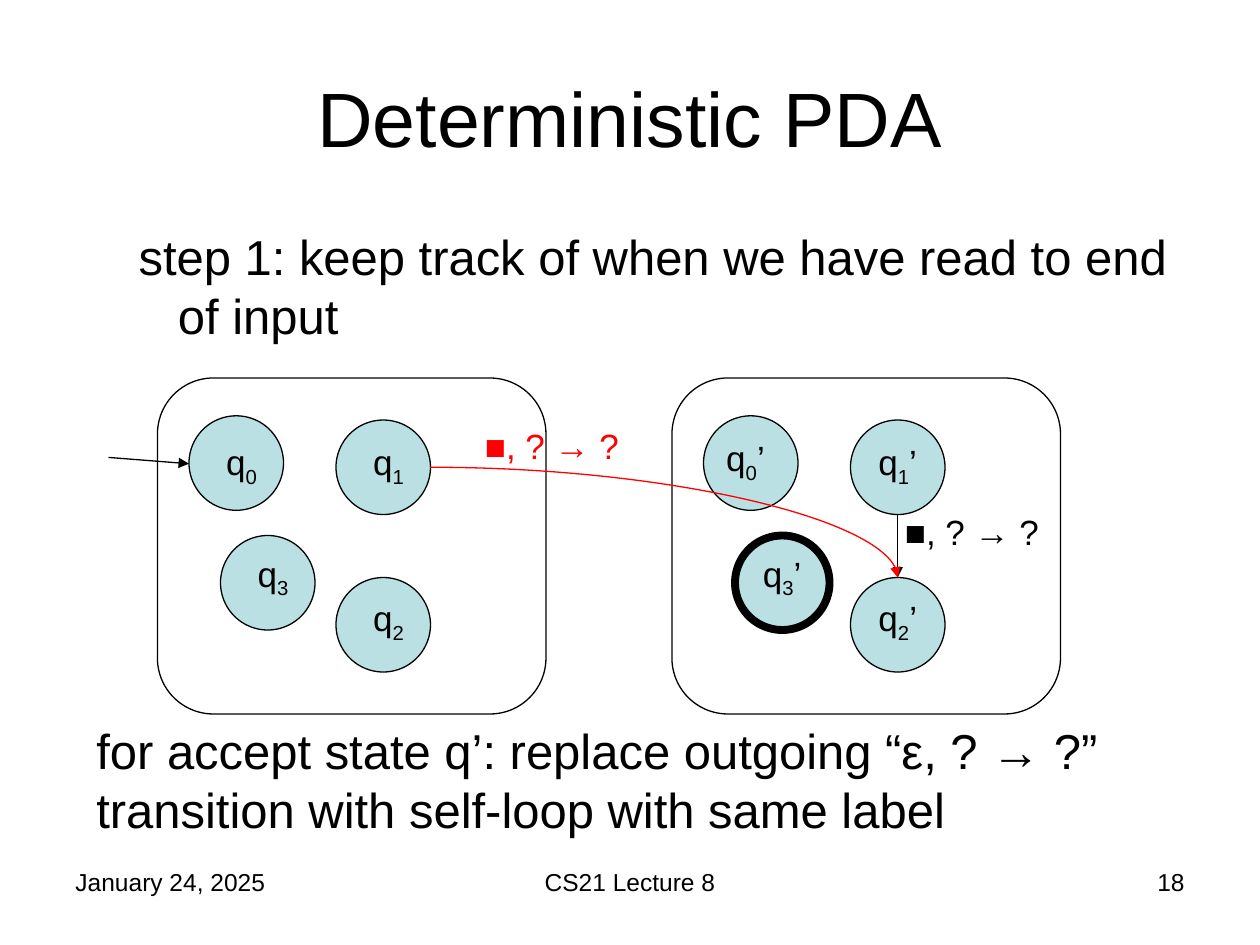
from dataclasses import dataclass

from lxml import etree
from pptx import Presentation
from pptx.dml.color import RGBColor
from pptx.enum.shapes import MSO_CONNECTOR, MSO_SHAPE
from pptx.enum.text import MSO_ANCHOR, MSO_AUTO_SIZE, PP_ALIGN
from pptx.oxml.ns import qn
from pptx.util import Pt


@dataclass(frozen=True)
class Theme:
    font: str = "Arial"
    ink: RGBColor = RGBColor(0, 0, 0)
    accent: RGBColor = RGBColor(255, 0, 0)
    state: RGBColor = RGBColor(0xBB, 0xE0, 0xE3)
    title: int = 44
    body: int = 28
    label: int = 20
    footer: int = 14
    thin: float = 0.75
    thick: float = 4.5


theme = Theme()


def write(box, text, size=theme.label, color=theme.ink, align=PP_ALIGN.LEFT,
          anchor=MSO_ANCHOR.TOP, grow=False, before=None):
    """Write one paragraph; text between underscores is subscript."""
    frame = box.text_frame
    frame.word_wrap = True
    frame.auto_size = MSO_AUTO_SIZE.SHAPE_TO_FIT_TEXT if grow else MSO_AUTO_SIZE.NONE
    frame.vertical_anchor = anchor
    para = frame.paragraphs[0]
    para.alignment = align
    if before:
        para.space_before = Pt(0)
        spacing = para._p.pPr.find(qn("a:spcBef"))
        spacing.remove(spacing[0])
        etree.SubElement(spacing, qn("a:spcPct"), val=str(before * 1000))
    for index, part in enumerate(text.split("_")):
        if not part:
            continue
        span = para.add_run()
        span.text = part
        span.font.name = theme.font
        span.font.size = Pt(size)
        span.font.color.rgb = color
        if index % 2:
            span.font._element.set("baseline", "-25000")
    return para


def connect(kind, start, end, color=theme.ink):
    """Draw a thin connector with an arrowhead at its end."""
    arrow = page.shapes.add_connector(kind, *(Pt(v) for v in start + end))
    arrow.line.color.rgb = color
    arrow.line.width = Pt(theme.thin)
    etree.SubElement(arrow.line._get_or_add_ln(), qn("a:tailEnd"), type="triangle")
    etree.SubElement(arrow._element.spPr, qn("a:effectLst"))
    return arrow


deck = Presentation()
deck.slide_width, deck.slide_height = Pt(720), Pt(540)
page = deck.slides.add_slide(deck.slide_layouts[1])

# Title and first step
title, body = page.placeholders
title.left, title.top, title.width, title.height = Pt(36), Pt(21.6), Pt(648), Pt(90)
write(title, "Deterministic PDA", size=theme.title, align=PP_ALIGN.CENTER,
      anchor=MSO_ANCHOR.MIDDLE)
body.left, body.top, body.width, body.height = Pt(36), Pt(126), Pt(648), Pt(84)
para = write(body, "step 1: keep track of when we have read to end of input",
             size=theme.body, before=20)
para.level = 1
para._p.pPr.set("marL", str(Pt(58.5)))
para._p.pPr.set("indent", str(Pt(-22.5)))
etree.SubElement(para._p.pPr, qn("a:buNone"))

# Footer
for text, left, width, align in [
    ("January 24, 2025", 36, 168, PP_ALIGN.LEFT),
    ("CS21 Lecture 8", 246, 228, PP_ALIGN.CENTER),
    ("18", 516, 168, PP_ALIGN.RIGHT),
]:
    box = page.shapes.add_textbox(Pt(left), Pt(492), Pt(width), Pt(37.5))
    write(box, text, size=theme.footer, align=align)

# Two copies of the automaton: panel and state circles
copy_offset = 294
diameter = 54
places = {"q0": (108, 237.6), "q3": (126, 306), "q1": (192, 240), "q2": (192, 330)}
states = {}
for offset, mark in [(0, ""), (copy_offset, "’")]:
    panel = page.shapes.add_shape(MSO_SHAPE.ROUNDED_RECTANGLE, Pt(90 + offset), Pt(216),
                                  Pt(222), Pt(192))
    panel.shadow.inherit = False
    panel.fill.background()
    panel.line.color.rgb = theme.ink
    panel.line.width = Pt(theme.thin)
    for name, (left, top) in places.items():
        circle = page.shapes.add_shape(MSO_SHAPE.OVAL, Pt(left + offset), Pt(top),
                                       Pt(diameter), Pt(diameter))
        circle.shadow.inherit = False
        circle.fill.solid()
        circle.fill.fore_color.rgb = theme.state
        circle.line.color.rgb = theme.ink
        accepting = name + mark == "q3’"
        circle.line.width = Pt(theme.thick if accepting else theme.thin)
        states[name + mark] = circle

# Transitions
connect(MSO_CONNECTOR.STRAIGHT, (62, 261.4), (108, 265))
down = connect(MSO_CONNECTOR.STRAIGHT, (513, 294), (513, 330))
down.end_connect(states["q2’"], 0)
curve = connect(MSO_CONNECTOR.CURVE, (246, 267), (513, 330), color=theme.accent)
curve._element.spPr.find(qn("a:prstGeom")).set("prst", "curvedConnector2")

# State names
for text, left, top, width in [
    ("q_0_", 120, 248.4, 36),
    ("q_1_", 204, 248.4, 36),
    ("q_3_", 138, 312, 36),
    ("q_2_", 204, 337.2, 36),
    ("q_0_’", 402, 246, 48),
    ("q_1_’", 492, 248.4, 42),
    ("q_3_’", 426, 312, 42),
    ("q_2_’", 486, 337.2, 54),
]:
    box = page.shapes.add_textbox(Pt(left), Pt(top), Pt(width), Pt(31))
    write(box, text, align=PP_ALIGN.CENTER, grow=True, before=50)

# Transition labels and closing remark
for text, left, top, width, height, size, color in [
    ("■, ? → ?", 270, 239, 102, 31, theme.label, theme.accent),
    ("■, ? → ?", 510, 288, 102, 31, theme.label, theme.ink),
    ("for accept state q’: replace outgoing “ε, ? → ?” transition with "
     "self-loop with same label", 48, 408, 618, 74, theme.body, theme.ink),
]:
    box = page.shapes.add_textbox(Pt(left), Pt(top), Pt(width), Pt(height))
    write(box, text, size=size, color=color, grow=True, before=50)

deck.save("out.pptx")
